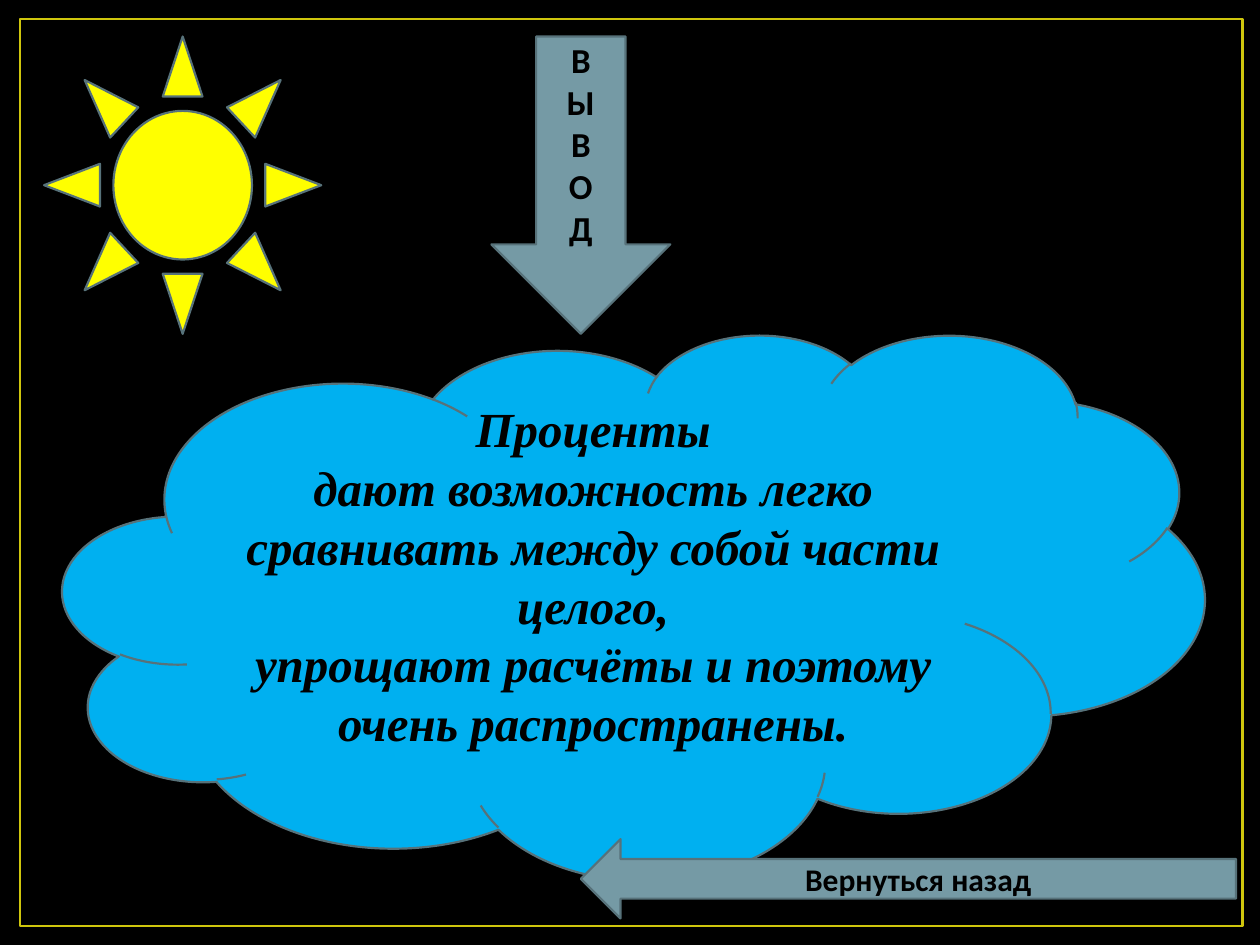
import pptx
import pptx.util
import pptx.dml.color
import pptx.enum.shapes
import pptx.enum.text
from dataclasses import dataclass

Inches = pptx.util.Inches
Pt = pptx.util.Pt
RGB = pptx.dml.color.RGBColor.from_string
SHAPE = pptx.enum.shapes.MSO_SHAPE


@dataclass(frozen=True)
class Theme:
    night: str = "000000"
    frame: str = "CFC60D"
    outline: str = "57727A"
    cloud: str = "00B0F0"
    sun: str = "FFFF00"
    arrow: str = "759AA5"
    ink: str = "000000"
    body_font: str = "Calibri"
    quote_font: str = "Times New Roman"
    quote_size: int = 28
    heading_size: int = 20
    link_size: int = 18


theme = Theme()


def draw(preset, left, top, width, height, fill=None, line=theme.outline, weight=1.25):
    figure = slide.shapes.add_shape(
        preset, Inches(left), Inches(top), Inches(width), Inches(height))
    figure.shadow.inherit = False
    if fill:
        figure.fill.solid()
        figure.fill.fore_color.rgb = RGB(fill)
    else:
        figure.fill.background()
    figure.line.color.rgb = RGB(line)
    figure.line.width = Pt(weight)
    return figure


def write(figure, lines, size, font=theme.body_font, italic=False, bottom=0.05):
    frame = figure.text_frame
    frame.word_wrap = True
    frame.vertical_anchor = pptx.enum.text.MSO_ANCHOR.MIDDLE
    frame.margin_bottom = Inches(bottom)
    for index, line in enumerate(lines):
        paragraph = frame.add_paragraph() if index else frame.paragraphs[0]
        paragraph.alignment = pptx.enum.text.PP_ALIGN.CENTER
        run = paragraph.add_run()
        run.text = line
        run.font.name = font
        run.font.size = Pt(size)
        run.font.bold = True
        run.font.italic = italic
        run.font.color.rgb = RGB(theme.ink)


deck = pptx.Presentation()
deck.slide_width = Inches(10)
deck.slide_height = Inches(7.5)
slide = deck.slides.add_slide(deck.slide_layouts[6])
slide.background.fill.solid()
slide.background.fill.fore_color.rgb = RGB(theme.night)

draw(SHAPE.RECTANGLE, 0.16, 0.15, 9.7, 7.2, line=theme.frame, weight=1.5)

conclusion = draw(SHAPE.CLOUD, 0.5, 2.65, 9.06, 4.33, fill=theme.cloud)
write(
    conclusion,
    [
        "Проценты",
        "дают возможность легко",
        "сравнивать между собой части целого,",
        "упрощают расчёты и поэтому",
        "очень распространены.",
    ],
    size=theme.quote_size, font=theme.quote_font, italic=True, bottom=0.35)

draw(SHAPE.SUN, 0.35, 0.29, 2.2, 2.36, fill=theme.sun)

heading = draw(SHAPE.DOWN_ARROW, 3.9, 0.29, 1.42, 2.36, fill=theme.arrow)
write(heading, "ВЫВОД", size=theme.heading_size, bottom=0.35)

back_link = draw(SHAPE.LEFT_ARROW, 4.61, 6.66, 5.2, 0.63, fill=theme.arrow)
write(back_link, ["Вернуться назад"], size=theme.link_size)

deck.save("out.pptx")
